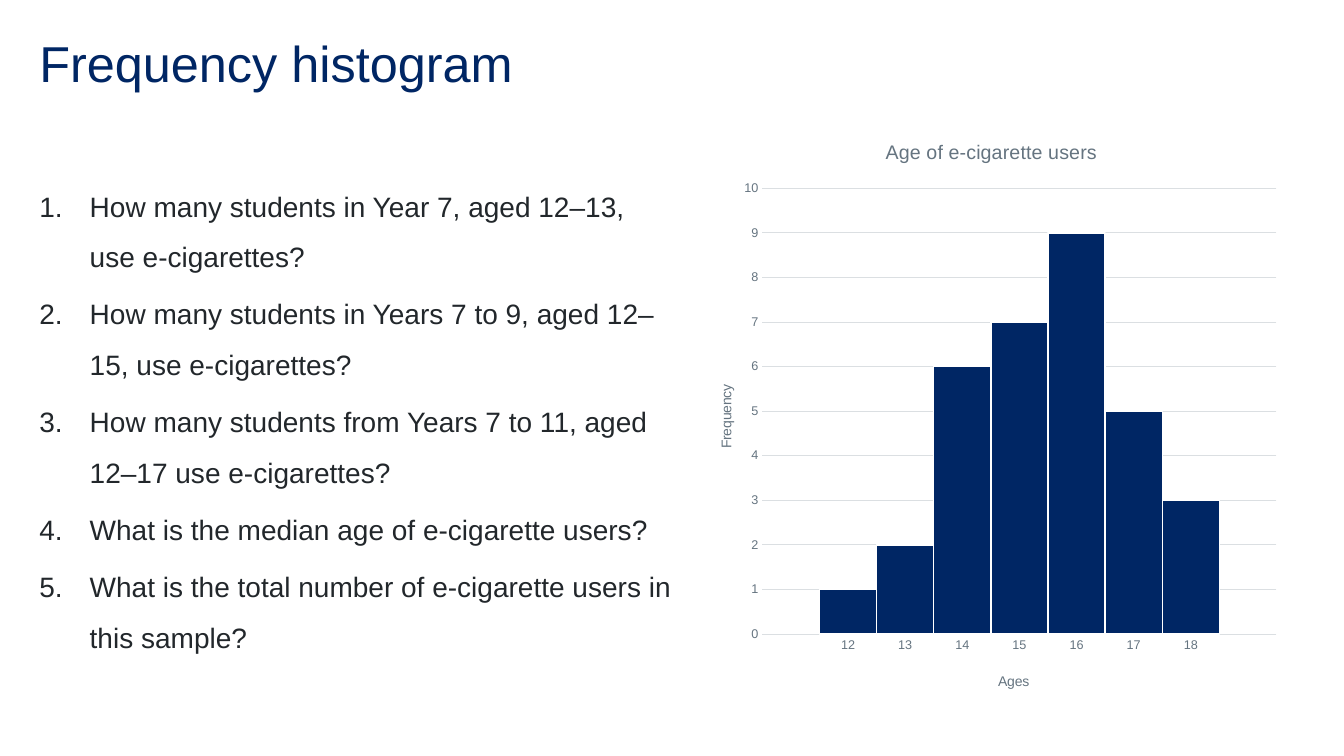
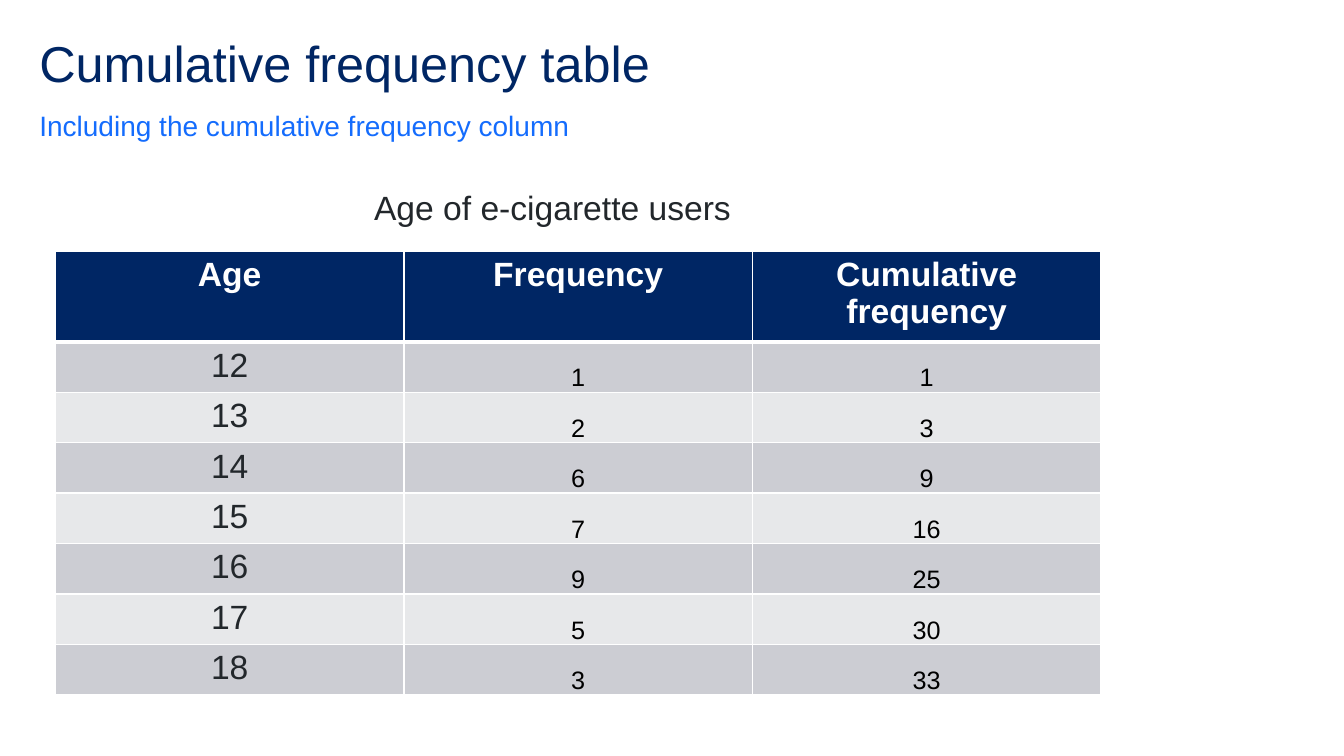
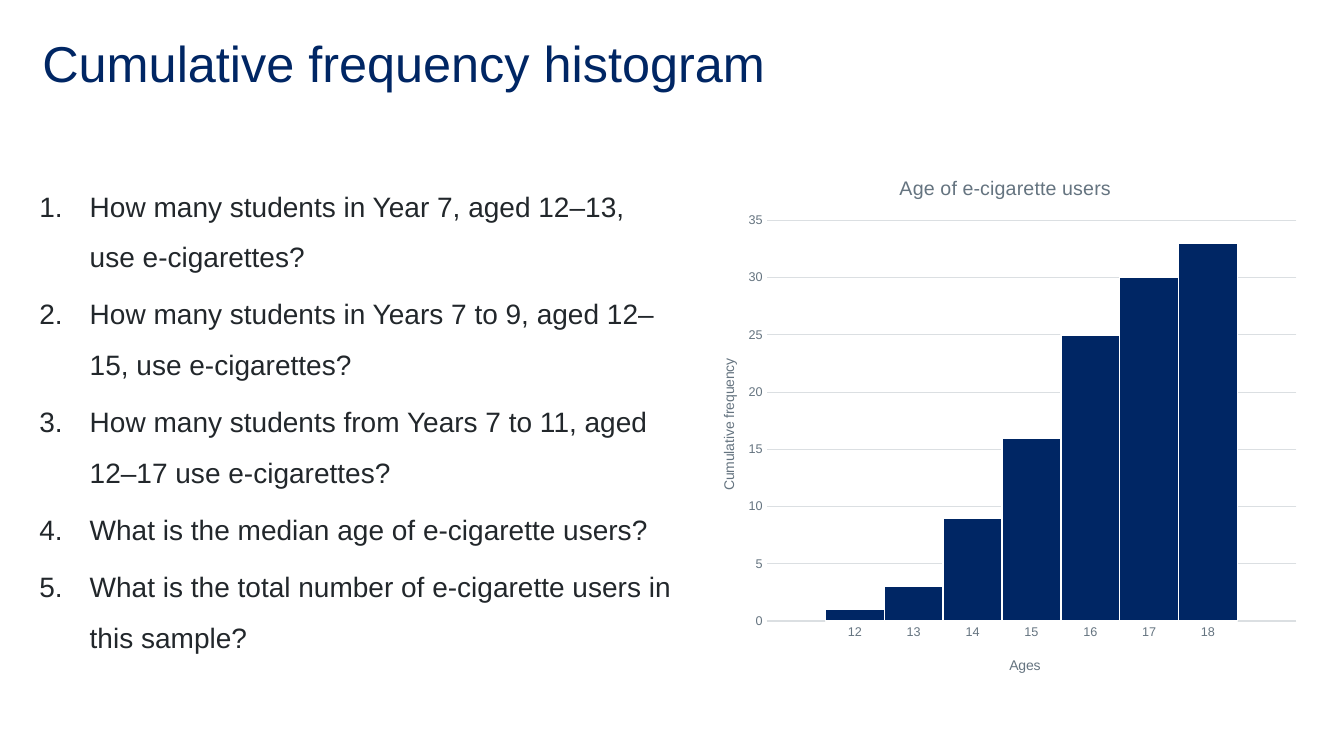
from itertools import accumulate
from pptx import Presentation
from pptx.chart.data import CategoryChartData
from pptx.dml.color import RGBColor
from pptx.enum.chart import XL_CHART_TYPE, XL_TICK_MARK
from pptx.enum.text import MSO_ANCHOR, PP_ALIGN
from pptx.oxml.ns import qn
from pptx.oxml.xmlchemy import OxmlElement
from pptx.util import Inches, Pt

NAVY, BLUE, INK, GREY = "002664", "146CFD", "22272B", "657480"
RULE, WHITE, BLACK = "DBDFE2", "FFFFFF", "000000"
BANDS = ["CCCDD3", "E7E8EA"]

AGES = [12, 13, 14, 15, 16, 17, 18]
COUNTS = [1, 2, 6, 7, 9, 5, 3]
TOTALS = list(accumulate(COUNTS))
USERS = "Age of e-cigarette users"
TASKS = [
    "How many students in Year 7, aged 12–13, use e-cigarettes?",
    "How many students in Years 7 to 9, aged 12–15, use e-cigarettes?",
    "How many students from Years 7 to 11, aged 12–17 use e-cigarettes?",
    "What is the median age of e-cigarette users?",
    "What is the total number of e-cigarette users in this sample?",
]


def color(code):
    return RGBColor.from_string(code)


def place(part, **spots):
    layout = part.find(qn("c:layout"))
    if layout is None:
        layout = OxmlElement("c:layout")
        part.insert(0, layout)
    manual = OxmlElement("c:manualLayout")
    layout.append(manual)
    rules = {"xMode": "edge", "yMode": "edge", **spots}
    if "w" in spots:
        rules = {"layoutTarget": "inner", **rules}
    for name, value in rules.items():
        item = OxmlElement("c:" + name)
        item.set("val", str(value))
        manual.append(item)


class Deck:
    font = "Arial"

    def __init__(self):
        self.show = Presentation()
        self.show.slide_width = Inches(13.33)
        self.show.slide_height = Inches(7.5)
        self.slide = None

    def style(self, font, size, code, bold=False):
        font.name = self.font
        font.size = Pt(size)
        font.bold = bold
        font.color.rgb = color(code)

    def text(self, box, lines, size, code, inset=True, align=None,
             space=None, after=None, anchor=MSO_ANCHOR.TOP):
        shape = self.slide.shapes.add_textbox(*map(Inches, box))
        frame = shape.text_frame
        frame.word_wrap = True
        frame.vertical_anchor = anchor
        if not inset:
            frame.margin_left = frame.margin_right = 0
            frame.margin_top = frame.margin_bottom = 0
        frame.text = "\n".join(lines)
        for para in frame.paragraphs:
            para.alignment = align
            para.line_spacing = space
            if after:
                para.space_after = Pt(after)
            for run in para.runs:
                self.style(run.font, size, code)
        return frame

    def page(self, title, left=0.39):
        self.slide = self.show.slides.add_slide(self.show.slide_layouts[6])
        self.text((left, 0.39, 12.56, 0.6), [title], 36, NAVY,
                  inset=False, space=0.9)

    def tasks(self, lines):
        frame = self.text((0.39, 1.71, 6.27, 5.26), lines, 20, INK,
                          inset=False, space=1.5, after=5)
        for para in frame.paragraphs:
            props = para._p.get_or_add_pPr()
            props.set("marL", str(Inches(0.5)))
            props.set("indent", str(Inches(-0.5)))
            mark = OxmlElement("a:buAutoNum")
            mark.set("type", "arabicPeriod")
            props.append(mark)

    def label(self, title, words, size, spot):
        title.text_frame.text = words
        for run in title.text_frame.paragraphs[0].runs:
            self.style(run.font, size, GREY)
        place(title._element, x=spot[0], y=spot[1])

    def chart(self, box, values, name, top, step, plot, spots):
        data = CategoryChartData()
        data.categories = ["", *map(str, AGES), ""]
        data.add_series("Series 1", [None, *values, None])
        chart = self.slide.shapes.add_chart(
            XL_CHART_TYPE.COLUMN_CLUSTERED, *map(Inches, box), data).chart
        self.style(chart.font, 10, INK)
        chart.has_legend = False
        chart.has_title = True
        self.label(chart.chart_title, USERS, 14, spots[0])

        ages, scale = chart.category_axis, chart.value_axis
        for axis, words, spot in zip((ages, scale), ("Ages", name), spots[1:]):
            axis.has_title = True
            self.label(axis.axis_title, words, 10, spot)
            self.style(axis.tick_labels.font, 9, GREY)
            axis.major_tick_mark = axis.minor_tick_mark = XL_TICK_MARK.NONE
        turn = scale.axis_title.text_frame._txBody.bodyPr
        turn.set("rot", "-5400000")
        turn.set("vert", "horz")
        scale.minimum_scale, scale.maximum_scale = 0, top
        scale.major_unit = step
        scale.has_major_gridlines = True
        scale.format.line.fill.background()
        for line in (ages.format.line, scale.major_gridlines.format.line):
            line.color.rgb = color(RULE)
            line.width = Pt(0.75)

        bars = chart.plots[0]
        bars.vary_by_categories = False
        bars.gap_width, bars.overlap = 0, -27
        look = bars.series[0].format
        look.fill.solid()
        look.fill.fore_color.rgb = color(NAVY)
        look.line.color.rgb = color(WHITE)
        look.line.width = Pt(1)
        place(chart._chartSpace.chart.plotArea,
              **dict(zip("xywh", plot)))

    def border(self, cell, base):
        props = cell._tc.get_or_add_tcPr()
        for spot, side in enumerate("LRTB"):
            line = OxmlElement("a:ln" + side)
            line.set("w", str(Pt(base if side == "B" else 1)))
            fill = OxmlElement("a:solidFill")
            tint = OxmlElement("a:srgbClr")
            tint.set("val", WHITE)
            fill.append(tint)
            line.append(fill)
            props.insert(spot, line)

    def cell(self, cell, words, size, code, fill, bold=False, base=1):
        cell.text = words
        para = cell.text_frame.paragraphs[0]
        para.alignment = PP_ALIGN.CENTER
        self.style(para.runs[0].font, size, code, bold)
        cell.fill.solid()
        cell.fill.fore_color.rgb = color(fill)
        self.border(cell, base)

    def table(self, box, heads, rows):
        grid = self.slide.shapes.add_table(
            len(rows) + 1, len(heads), *map(Inches, box)).table
        grid.horz_banding = False
        for row in grid.rows:
            row.height = Inches(0.5)
        grid.rows[0].height = Inches(0.9)
        for col, head in enumerate(heads):
            self.cell(grid.cell(0, col), head, 24, WHITE, NAVY, True, 3)
        for row, values in enumerate(rows, 1):
            band = BANDS[(row - 1) % 2]
            for col, value in enumerate(values):
                cell = grid.cell(row, col)
                if col == 0:
                    self.cell(cell, str(value), 24, INK, band)
                    continue
                self.cell(cell, str(value), 18, BLACK, band)
                cell.vertical_anchor = MSO_ANCHOR.BOTTOM
                cell.margin_left = cell.margin_right = Inches(0.01)
                cell.margin_top, cell.margin_bottom = Inches(0.01), 0


def main():
    deck = Deck()

    deck.page("Frequency histogram")
    deck.chart((6.85, 1.17, 5.93, 5.82), COUNTS, "Frequency", 10, 1,
               (0.12, 0.12, 0.86, 0.76),
               [(0.32, 0.03), (0.51, 0.94), (0.04, 0.45)])
    deck.tasks(TASKS)

    deck.page("Cumulative frequency table")
    deck.text((0.39, 1.07, 12.56, 0.34),
              ["Including the cumulative frequency column"], 20, BLUE,
              inset=False, space=1.5, after=12, anchor=MSO_ANCHOR.BOTTOM)
    deck.text((1.2, 1.81, 8.56, 0.5), [USERS], 24, INK,
              align=PP_ALIGN.CENTER)
    deck.table((0.55, 2.49, 10.37, 4.4),
               ["Age", "Frequency", "Cumulative frequency"],
               list(zip(AGES, COUNTS, TOTALS)))

    deck.page("Cumulative frequency histogram", 0.42)
    deck.chart((6.87, 1.49, 6.11, 5.37), TOTALS, "Cumulative frequency", 35, 5,
               (0.12, 0.13, 0.86, 0.74),
               [(0.33, 0.04), (0.51, 0.93), (0.04, 0.38)])
    deck.tasks(TASKS)

    deck.show.save("out.pptx")


if __name__ == "__main__":
    main()
